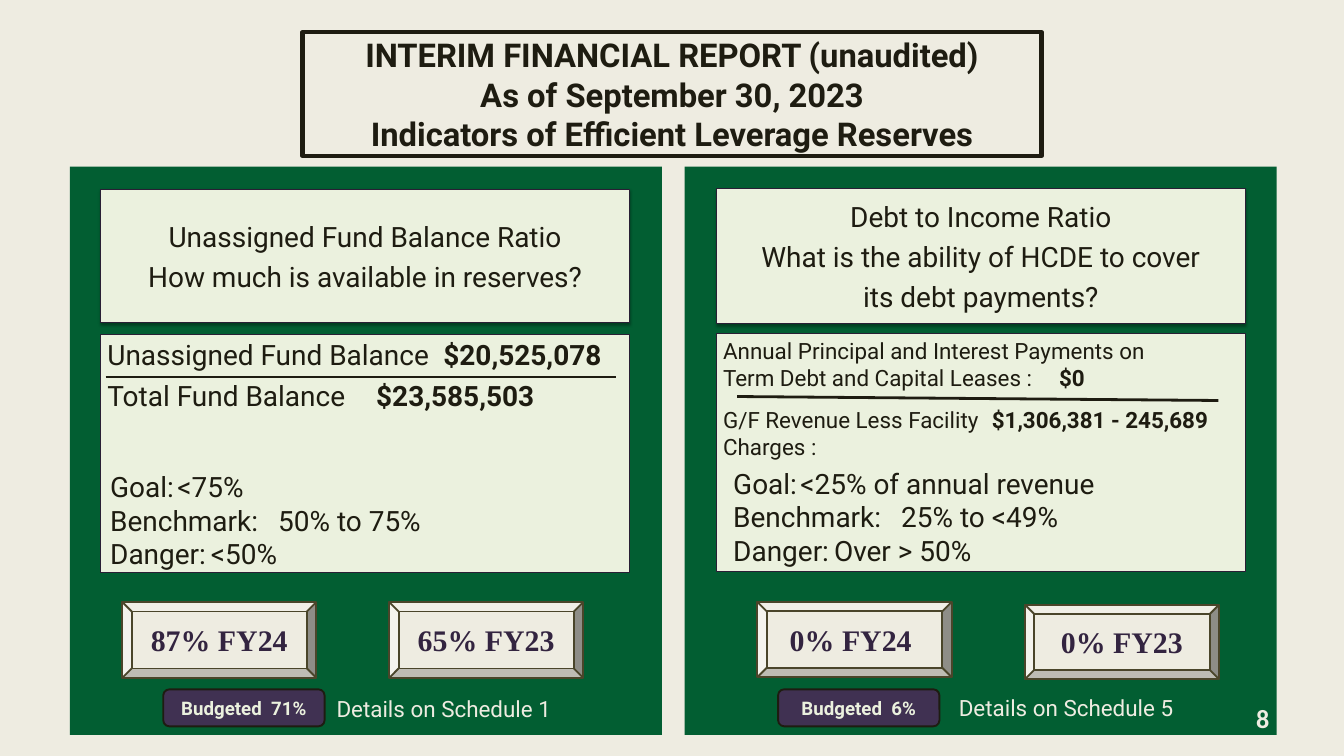
from lxml import etree
from pptx import Presentation
from pptx.dml.color import RGBColor
from pptx.enum.shapes import MSO_CONNECTOR, MSO_SHAPE
from pptx.enum.text import MSO_ANCHOR, MSO_AUTO_SIZE, PP_ALIGN
from pptx.oxml.ns import qn
from pptx.util import Cm, Pt

RECT, ROUND, BEVEL = MSO_SHAPE.RECTANGLE, MSO_SHAPE.ROUNDED_RECTANGLE, MSO_SHAPE.BEVEL
STRAIGHT = MSO_CONNECTOR.STRAIGHT
TOP, MIDDLE = MSO_ANCHOR.TOP, MSO_ANCHOR.MIDDLE
LEFT, CENTER, RIGHT = PP_ALIGN.LEFT, PP_ALIGN.CENTER, PP_ALIGN.RIGHT
FIXED, GROW = MSO_AUTO_SIZE.NONE, MSO_AUTO_SIZE.SHAPE_TO_FIT_TEXT

CREAM, GREEN, PALE, INK = "EEECE1", "025E32", "EBF1DE", "1E1C11"
EDGE, BROWN, PLUM, GRAPE = "291F35", "4A452A", "332440", "403152"


def color(text):
    return RGBColor.from_string(text)


class Deck:
    font = "Roboto"

    def __init__(self, slide):
        self.slide = slide
        self.shapes = slide.shapes
        fill = slide.background.fill
        fill.solid()
        fill.fore_color.rgb = color(CREAM)

    def letter(self, shape, paras, size, ink=INK, align=LEFT, anchor=TOP,
               bold=False, gap=0, tabs=(), font=font):
        """Put text in a shape; in each paragraph the runs after the first are bold."""
        frame = shape.text_frame
        frame.word_wrap = True
        frame.vertical_anchor = anchor
        for i, runs in enumerate(paras):
            para = frame.add_paragraph() if i else frame.paragraphs[0]
            para.alignment = align
            para.space_before = Pt(gap)
            for j, text in enumerate(runs):
                for k, line in enumerate(text.split("\n")):
                    if k:
                        para.add_line_break()
                    run = para.add_run()
                    run.text = line
                    run.font.name = font
                    run.font.size = Pt(size)
                    run.font.bold = bold or j > 0
                    run.font.color.rgb = color(ink)
            props = para._p.get_or_add_pPr()
            props.set("marL", "0")
            props.set("indent", "0")
            etree.SubElement(props, qn("a:buNone"))
            if tabs and tabs[i]:
                stops = etree.SubElement(props, qn("a:tabLst"))
                etree.SubElement(stops, qn("a:tab"), pos=str(Cm(tabs[i])), algn="l")
        return frame

    def box(self, kind, area, fill, edge=None, width=0.75):
        shape = self.shapes.add_shape(kind, *map(Cm, area))
        shape.shadow.inherit = False
        shape.fill.solid()
        shape.fill.fore_color.rgb = color(fill)
        if edge:
            shape.line.color.rgb = color(edge)
            shape.line.width = Pt(width)
        else:
            shape.line.fill.background()
        return shape

    def shade(self, shape):
        """Add a soft shadow below a shape."""
        effects = shape._element.spPr.find(qn("a:effectLst"))
        outer = etree.SubElement(effects, qn("a:outerShdw"), blurRad=str(Pt(3.1)),
                                 dist=str(Pt(1.8)), dir="5400000", rotWithShape="0")
        black = etree.SubElement(outer, qn("a:srgbClr"), val="000000")
        etree.SubElement(black, qn("a:alpha"), val="35000")

    def label(self, area, text, size, **style):
        shape = self.shapes.add_textbox(*map(Cm, area))
        frame = self.letter(shape, [(text,)], size, CREAM, **style)
        frame.auto_size = GROW
        return frame

    def holder(self, index, area):
        """Move a placeholder to its area, in front of what is drawn so far."""
        shape = self.slide.placeholders[index]
        shape.left, shape.top, shape.width, shape.height = map(Cm, area)
        shape.text_frame.auto_size = FIXED
        self.shapes._spTree.append(shape._element)
        return shape

    def rule(self, ends):
        line = self.shapes.add_connector(STRAIGHT, *map(Cm, ends))
        line.line.color.rgb = color(INK)
        line.line.width = Pt(3)
        etree.SubElement(line._element.spPr, qn("a:effectLst"))

    def title(self, area, text):
        shape = self.holder(0, area)
        shape.line.color.rgb = color(INK)
        shape.line.width = Pt(4.5)
        frame = self.letter(shape, [(text,)], 35.1, align=CENTER, anchor=MIDDLE, bold=True)
        frame.margin_left = frame.margin_right = 0
        frame.margin_top = frame.margin_bottom = 0

    def panel(self, left):
        self.box(RECT, (left, 6.3, 22.38, 21.48), GREEN)

    def heading(self, area, lines):
        shape = self.box(RECT, area, PALE, EDGE)
        self.shade(shape)
        self.letter(shape, [(line,) for line in lines], 30, align=CENTER,
                    anchor=MIDDLE, gap=7)

    def figures(self, area, paras, size, **style):
        return self.letter(self.box(RECT, area, PALE, EDGE), paras, size, **style)

    def goals(self, index, area, rows, tabs):
        paras = [("\t".join(row),) for row in rows]
        self.letter(self.holder(index, area), paras, 30, tabs=tabs)

    def ratio(self, area, text):
        shape = self.box(BEVEL, area, CREAM, BROWN, 2)
        self.letter(shape, [(text,)], 32, PLUM, CENTER, MIDDLE, True,
                    font="Times New Roman")

    def budget(self, left, text):
        shape = self.box(ROUND, (left, 26.06, 6.1, 1.4), GRAPE, INK, 2)
        self.letter(shape, [(text,)], 20, PALE, CENTER, MIDDLE, True)


def main():
    show = Presentation()
    show.slide_width, show.slide_height = Cm(50.8), Cm(28.58)
    deck = Deck(show.slides.add_slide(show.slide_layouts[3]))

    for left in (2.64, 25.88):
        deck.panel(left)
    deck.title((11.43, 1.22, 27.94, 4.67),
               "INTERIM FINANCIAL REPORT (unaudited)\nAs of September 30, 2023\n"
               "Indicators of Efficient Leverage Reserves")

    deck.heading((3.81, 7.16, 19.99, 5.03),
                 ["Unassigned Fund Balance Ratio", "How much is available in reserves?"])
    deck.heading((27.08, 7.14, 19.99, 5.08),
                 ["Debt to Income Ratio", "What is the ability of HCDE to cover",
                  "its debt payments?"])

    deck.figures((3.81, 12.65, 19.99, 8.99),
                 [("Unassigned Fund Balance\t", "$20,525,078"),
                  ("Total Fund Balance\t", "$23,585,503")],
                 30, gap=7, tabs=(13.2, 13.2))
    debt = deck.figures((27.08, 12.62, 19.99, 8.99),
                        [("Annual Principal and Interest Payments on",),
                         ("Term Debt and Capital Leases :\t", "$0"),
                         ("G/F Revenue Less Facility\t", "$1,306,381 - 245,689"),
                         ("Charges :",)],
                        24, tabs=(0, 12.7, 10.36, 0))
    debt.paragraphs[2].space_before = Pt(16.4)

    for area, text in [((4.62, 22.76, 7.34, 2.87), "87% FY24"),
                       ((14.71, 22.76, 7.34, 2.87), "65% FY23"),
                       ((28.63, 22.76, 7.34, 2.84), "0% FY24 "),
                       ((38.74, 22.86, 7.34, 2.82), "0% FY23")]:
        deck.ratio(area, text)
    deck.budget(6.17, "Budgeted  71%")
    deck.budget(29.41, "Budgeted  6%")
    deck.label((12.47, 26.16, 8.84, 1.27), "Details on Schedule 1", 24)
    deck.label((35.99, 26.11, 9.73, 1.27), "Details on Schedule 5", 24)

    deck.rule((3.99, 14.25, 23.27, 14.25))
    deck.goals(1, (3.91, 17.63, 19.99, 4.11),
               [("Goal:", "<75%"), ("Benchmark:", "50% to 75%"), ("Danger:", "<50%")],
               (8.13, 8.13, 8.13))
    deck.goals(2, (27.46, 17.5, 19.05, 4.11),
               [("Goal:", "<25% of annual revenue"), ("Benchmark:", "25% to <49%"),
                ("Danger:", "Over > 50%")],
               (6.4, 6.93, 6.93))
    deck.rule((27.86, 14.99, 46.05, 15.14))

    page = deck.label((46.91, 26.54, 1.07, 1.19), "8", 28, align=RIGHT, bold=True,
                      font="Calibri")
    page.margin_left = page.margin_right = page.margin_top = page.margin_bottom = 0
    show.save("out.pptx")


if __name__ == "__main__":
    main()
